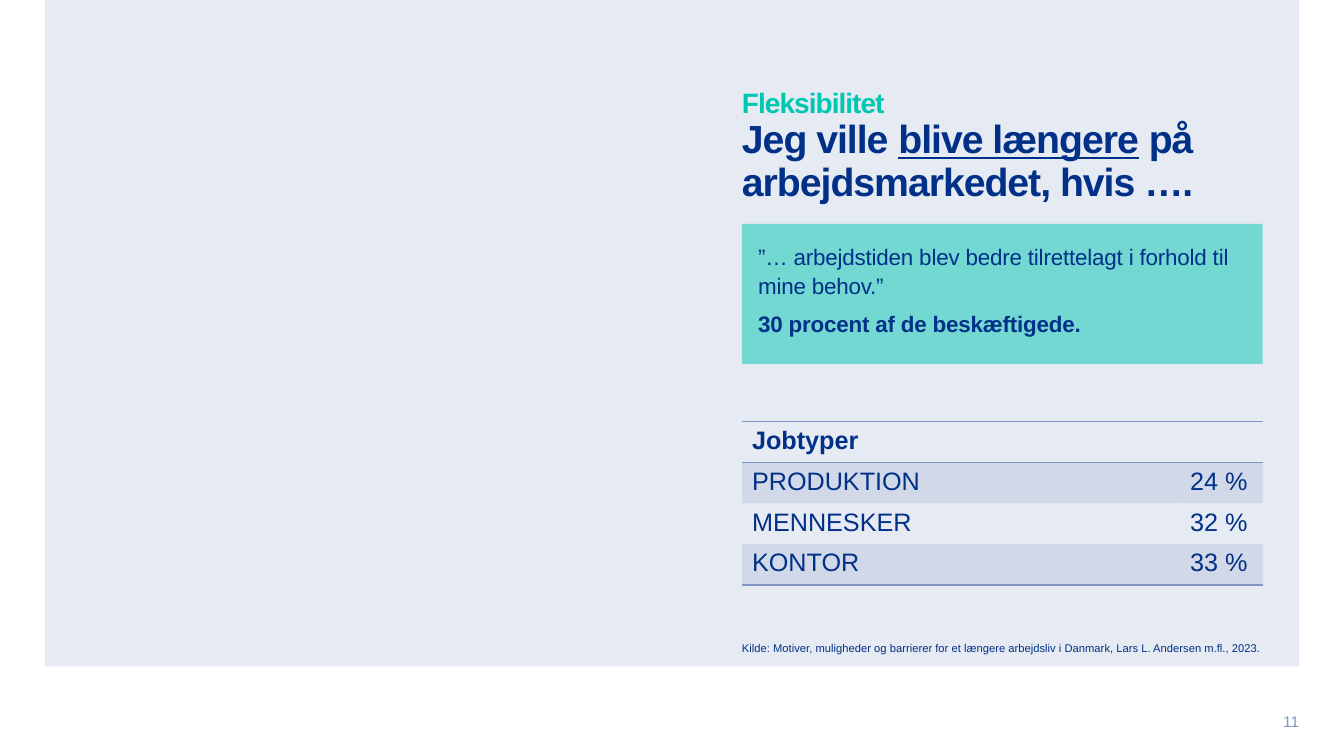
from copy import deepcopy

from lxml.etree import SubElement
from pptx import Presentation
from pptx.dml.color import RGBColor
from pptx.enum.shapes import MSO_SHAPE
from pptx.enum.text import MSO_ANCHOR, MSO_AUTO_SIZE, PP_ALIGN
from pptx.oxml.ns import qn
from pptx.util import Pt

FONT = "Arial"
COLORS = {
    "panel": "E6EAF3",
    "navy": "003087",
    "teal": "00C7B1",
    "steel": "8097C3",
}
LEFT, WIDTH = 530, 372  # text column

ROWS = [
    ("Jobtyper", ""),
    ("PRODUKTION", "24 %"),
    ("MENNESKER", "32 %"),
    ("KONTOR", "33 %"),
]


def rgb(name):
    return RGBColor.from_string(COLORS[name])


def set_fill(fill, color, alpha=None):
    fill.solid()
    fill.fore_color.rgb = rgb(color)
    if alpha is not None:
        clr = fill._xPr.find(qn("a:solidFill"))[0]
        SubElement(clr, qn("a:alpha")).set("val", str(alpha * 1000))


def style_run(r, size, color, bold=False, spacing=0):
    r.font.name = FONT
    r.font.size = Pt(size)
    r.font.bold = bold
    r.font.color.rgb = rgb(color)
    if spacing:
        r._r.get_or_add_rPr().set("spc", str(round(spacing * 100)))


def prepare_frame(tf, inset=0, anchor=MSO_ANCHOR.TOP):
    tf.word_wrap = True
    tf.auto_size = MSO_AUTO_SIZE.NONE
    tf.vertical_anchor = anchor
    tf.margin_left = tf.margin_right = Pt(inset)
    tf.margin_top = tf.margin_bottom = Pt(inset)


def add_rect(slide, x, y, w, h, color, alpha=None):
    sp = slide.shapes.add_shape(MSO_SHAPE.RECTANGLE, Pt(x), Pt(y), Pt(w), Pt(h))
    sp.shadow.inherit = False
    sp.line.fill.background()
    set_fill(sp.fill, color, alpha)
    return sp


def add_text(slide, x, y, w, h, text, size, color, anchor=MSO_ANCHOR.TOP):
    sp = slide.shapes.add_textbox(Pt(x), Pt(y), Pt(w), Pt(h))
    prepare_frame(sp.text_frame, anchor=anchor)
    p = sp.text_frame.paragraphs[0]
    p.text = text
    style_run(p.runs[0], size, color)
    return p


def format_title(slide):
    title = slide.shapes.title
    slide.shapes._spTree.append(title._element)  # in front of the panel
    title.left, title.top = Pt(LEFT), Pt(64)
    title.width, title.height = Pt(WIDTH), Pt(32)
    prepare_frame(title.text_frame)
    p = title.text_frame.paragraphs[0]
    p.alignment = PP_ALIGN.LEFT
    p.line_spacing = 0.9
    parts = [
        ("Fleksibilitet", 20, "teal", False, True),
        ("Jeg ville ", 28, "navy", False, False),
        ("blive længere", 28, "navy", True, False),
        (" på ", 28, "navy", False, True),
        ("arbejdsmarkedet, hvis ….", 28, "navy", False, False),
    ]
    for text, size, color, underline, line_break in parts:
        r = p.add_run()
        r.text = text
        style_run(r, size, color, bold=True, spacing=-0.7)
        r.font.underline = underline
        if line_break:
            p.add_line_break()
            p._p[-1].append(deepcopy(r._r.rPr))  # break keeps the run's size


def add_quote(slide):
    sp = add_rect(slide, LEFT, 160, WIDTH, 100, "teal", alpha=50)
    tf = sp.text_frame
    prepare_frame(tf, inset=11.5)
    tf.text = (
        "”… arbejdstiden blev bedre tilrettelagt i forhold til mine behov.”\n"
        "30 procent af de beskæftigede."
    )
    for p, bold in zip(tf.paragraphs, (False, True)):
        p.alignment = PP_ALIGN.LEFT
        p.line_spacing = 1.1
        p.space_after = Pt(6)
        style_run(p.runs[0], 16, "navy", bold, spacing=-0.1)


def add_border(cell, side):
    ln = SubElement(cell._tc.get_or_add_tcPr(), qn(f"a:{side}"), w=str(Pt(1)))
    fill = SubElement(ln, qn("a:solidFill"))
    SubElement(fill, qn("a:srgbClr"), val=COLORS["steel"])


def add_job_table(slide):
    row_height = 29.2
    frame = slide.shapes.add_table(
        len(ROWS), 2, Pt(LEFT), Pt(301), Pt(WIDTH), Pt(row_height * len(ROWS))
    )
    table = frame.table
    table.first_row = table.horz_banding = False
    # "No Style, No Grid"
    style = frame._element.find(".//" + qn("a:tableStyleId"))
    style.text = "{2D5ABB26-0587-4C30-8999-92F81FD0307C}"
    for column, width in zip(table.columns, (313, 59)):
        column.width = Pt(width)
    for i, values in enumerate(ROWS):
        table.rows[i].height = Pt(row_height)
        for j, value in enumerate(values):
            cell = table.cell(i, j)
            # Borders come before the fill
            if i == 0:
                add_border(cell, "lnT")
            if i in (0, len(ROWS) - 1):
                add_border(cell, "lnB")
            if i % 2:
                set_fill(cell.fill, "steel", alpha=20)
            else:
                cell.fill.background()
            p = cell.text_frame.paragraphs[0]
            p.text = value
            p.font.size = Pt(18)
            for r in p.runs:
                style_run(r, 18, "navy", bold=i == 0)


def main():
    prs = Presentation()
    prs.slide_width, prs.slide_height = Pt(960), Pt(540)
    slide = prs.slides.add_slide(prs.slide_layouts[5])

    # Background panel and page number
    add_rect(slide, 32, 0, 896, 476, "panel")
    number = add_text(slide, 896, 510, 32, 10, "11", 11, "steel", MSO_ANCHOR.MIDDLE)
    number.alignment = PP_ALIGN.RIGHT

    # Text column
    format_title(slide)
    add_quote(slide)
    add_job_table(slide)
    source = add_text(
        slide, LEFT, 458, 413, 15,
        "Kilde: Motiver, muligheder og barrierer for et længere arbejdsliv "
        "i Danmark, Lars L. Andersen m.fl., 2023.",
        8, "navy",
    )
    source.line_spacing = 1.04
    source.space_after = Pt(3)

    prs.save("out.pptx")


if __name__ == "__main__":
    main()
